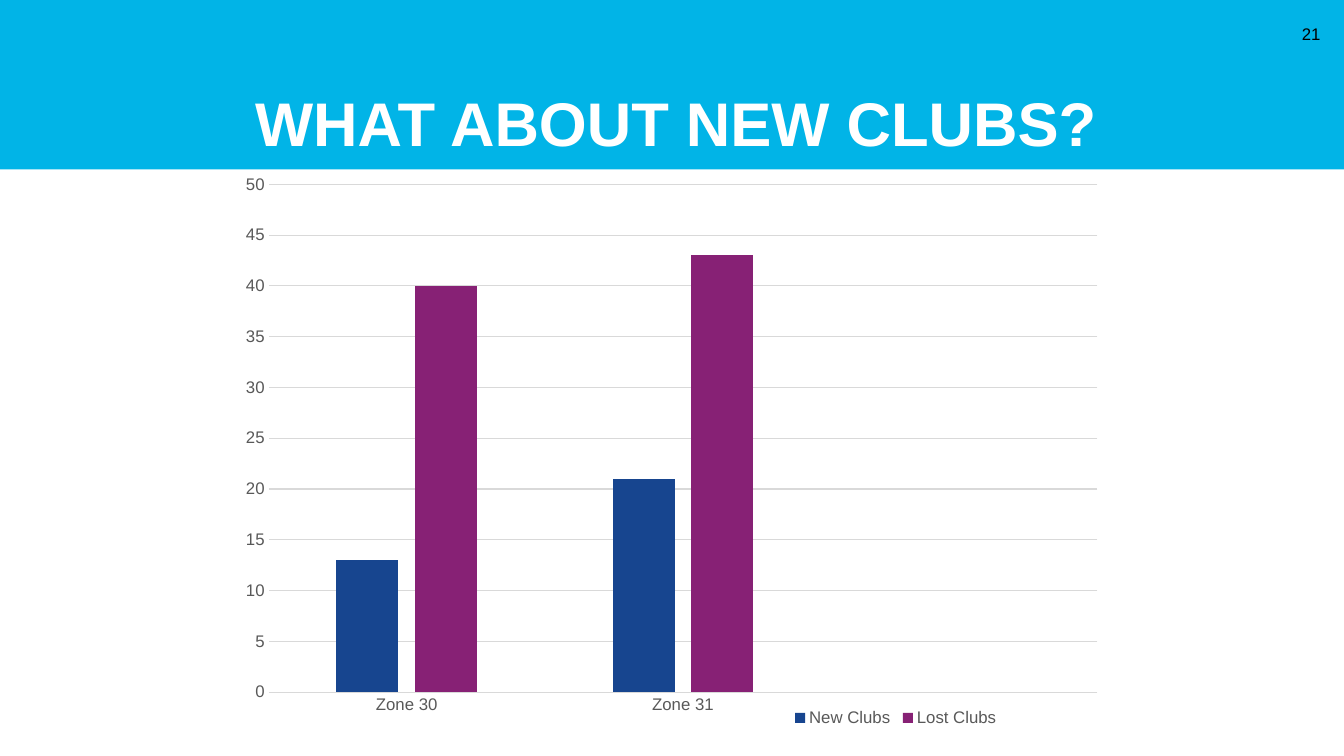
from lxml import etree
from pptx import Presentation
from pptx import util as u
from pptx.chart.data import CategoryChartData
from pptx.dml.color import RGBColor
from pptx.enum import chart as charts, shapes, text
from pptx.oxml.ns import qn


def paint(target, color):
    target.solid()
    target.fore_color.rgb = RGBColor.from_string(color)


def place(element, index, **settings):
    """Give a chart part a manual layout, as fractions of the chart."""
    for old in element.findall(qn("c:layout")):
        element.remove(old)
    layout = etree.Element(qn("c:layout"))
    manual = etree.SubElement(layout, qn("c:manualLayout"))
    for name, value in settings.items():
        etree.SubElement(manual, qn("c:" + name)).set("val", str(value))
    element.insert(index, layout)


deck = Presentation()
deck.slide_width, deck.slide_height = u.Cm(33.87), u.Cm(19.05)
page = deck.slides.add_slide(deck.slide_layouts[5])

# Header band, behind the title
band = page.shapes.add_shape(
    shapes.MSO_SHAPE.RECTANGLE, 0, 0, deck.slide_width, u.Cm(4.27))
band.shadow.inherit = False
paint(band.fill, "01B4E7")
band.line.fill.background()
page.shapes._spTree.insert(2, band._element)

# Title
title = page.shapes.title
title.left, title.top = u.Cm(1.07), u.Cm(0)
title.width, title.height = u.Cm(31.95), u.Cm(4.27)
frame = title.text_frame
frame.word_wrap = True
frame.auto_size = text.MSO_AUTO_SIZE.NONE
frame.vertical_anchor = text.MSO_ANCHOR.BOTTOM
frame.margin_left = frame.margin_right = frame.margin_bottom = u.Cm(0.25)
frame.margin_top = 0
para = frame.paragraphs[0]
para.alignment = text.PP_ALIGN.CENTER
para.line_spacing = 0.9
span = para.add_run()
span.text = "WHAT ABOUT NEW CLUBS?"
span.font.name, span.font.size, span.font.bold = "Arial", u.Pt(44), True
paint(span.font.fill, "FFFFFF")

# Club chart; the third category is empty
clubs = CategoryChartData()
clubs.categories = ["Zone 30", "Zone 31", ""]
clubs.add_series("New Clubs", [13, 21, None])
clubs.add_series("Lost Clubs", [40, 43, None])
chart = page.shapes.add_chart(
    charts.XL_CHART_TYPE.COLUMN_CLUSTERED,
    u.Cm(5.64), u.Cm(3.56), u.Cm(22.58), u.Cm(15.06), clubs).chart
chart.has_title = False
chart.font.name, chart.font.size = "Arial", u.Pt(10)

plot = chart.plots[0]
plot.gap_width, plot.overlap = 219, -27
plot.vary_by_categories = False
for series, color in zip(plot.series, ["17458F", "872175"]):
    paint(series.format.fill, color)

# Axes and legend
chart.has_legend = True
legend = chart.legend
legend.position = charts.XL_LEGEND_POSITION.BOTTOM
legend.include_in_layout = False
zones, counts = chart.category_axis, chart.value_axis
for font in (zones.tick_labels.font, counts.tick_labels.font, legend.font):
    font.name, font.size = "Arial", u.Pt(12)
    paint(font.fill, "595959")
for axis in (zones, counts):
    axis.major_tick_mark = axis.minor_tick_mark = charts.XL_TICK_MARK.NONE
counts.minimum_scale, counts.maximum_scale, counts.major_unit = 0, 50, 5
counts.has_major_gridlines = True
counts.format.line.fill.background()
for line in (zones.format.line, counts.major_gridlines.format.line):
    paint(line.fill, "D9D9D9")
    line.width = u.Pt(0.75)

place(chart._chartSpace.chart.plotArea, 0, layoutTarget="inner",
      xMode="edge", yMode="edge", x=0.05, y=0.072, w=0.925, h=0.85)
place(legend._element, 1, xMode="edge", yMode="edge",
      x=0.63, y=0.94, w=0.24, h=0.05)

# Page number
box = page.shapes.add_textbox(u.Cm(32.36), u.Cm(0.33), u.Cm(1.17), u.Cm(1.02))
box.text_frame.word_wrap = True
box.text_frame.vertical_anchor = text.MSO_ANCHOR.MIDDLE
para = box.text_frame.paragraphs[0]
para.alignment = text.PP_ALIGN.RIGHT
span = para.add_run()
span.text = "21"
span.font.name, span.font.size = "Arial", u.Pt(12)
paint(span.font.fill, "000000")

deck.save("out.pptx")
